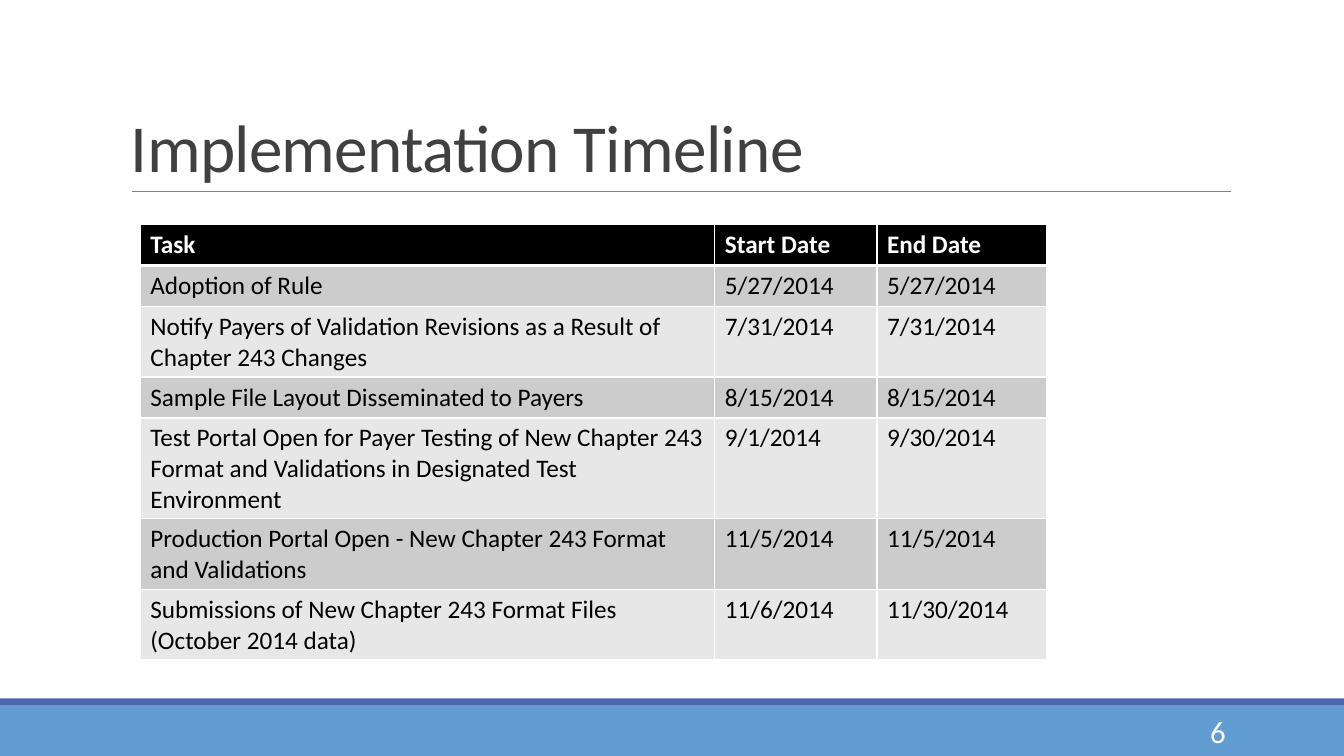
from dataclasses import dataclass

from lxml.etree import SubElement
from pptx import Presentation
from pptx.dml.color import RGBColor
from pptx.enum.shapes import MSO_CONNECTOR, MSO_SHAPE
from pptx.enum.text import MSO_ANCHOR, PP_ALIGN
from pptx.oxml import parse_xml
from pptx.oxml.ns import nsdecls, qn
from pptx.slide import Slide
from pptx.table import _Cell
from pptx.util import Emu, Inches, Pt

# Grid of 160 columns by 90 rows; one unit is a twelfth of an inch
COLUMNS, ROWS = 160, 90
UNIT = Inches(1) / 12


@dataclass(frozen=True)
class Theme:
    font: str = "Calibri"
    title_size: float = 48
    table_size: float = 18
    number_size: float = 22
    title: str = "404040"
    rule: str = "808080"
    band: str = "629DD1"
    stripe: str = "4A66AC"
    header: str = "000000"
    odd_row: str = "CCCCCC"
    even_row: str = "E7E7E7"
    dark: str = "000000"
    light: str = "FFFFFF"


@dataclass(frozen=True)
class Area:
    left: float
    top: float
    width: float
    height: float

    def lengths(self) -> tuple[Emu, ...]:
        return tuple(map(grid, (self.left, self.top, self.width, self.height)))


@dataclass(frozen=True)
class Bar:
    area: Area
    color: str


@dataclass(frozen=True)
class Label:
    text: str
    area: Area
    anchor: MSO_ANCHOR
    para_format: dict
    size: float
    color: str
    spacing: int = 0


@dataclass(frozen=True)
class Task:
    name: str
    start: str
    end: str


THEME = Theme()
BARS = [
    Bar(Area(0, 84, COLUMNS, 6), THEME.band),
    Bar(Area(0, 83.16, COLUMNS, 0.84), THEME.stripe),
]
LABELS = [
    Label("Implementation Timeline", Area(14.4, 3.75, 132.75, 19.05), MSO_ANCHOR.BOTTOM,
          {"line_spacing": 0.85}, THEME.title_size, THEME.title, -50),
    Label("6", Area(130, 84.7, 17.1, 4.8), MSO_ANCHOR.MIDDLE,
          {"alignment": PP_ALIGN.RIGHT}, THEME.number_size, THEME.light),
]
RULE_LEFT, RULE_RIGHT, RULE_TOP = 15.75, 146.5, 22.8
TABLE_LEFT, TABLE_TOP, ROW_HEIGHT = 16.7, 26.75, 4.87
TABLE_COLUMNS = (68.4, 19.3, 20.15)
TASKS = [
    Task("Task", "Start Date", "End Date"),
    Task("Adoption of Rule", "5/27/2014", "5/27/2014"),
    Task("Notify Payers of Validation Revisions as a Result of Chapter 243 Changes",
         "7/31/2014", "7/31/2014"),
    Task("Sample File Layout Disseminated to Payers", "8/15/2014", "8/15/2014"),
    Task("Test Portal Open for Payer Testing of New Chapter 243 Format and Validations "
         "in Designated Test Environment", "9/1/2014", "9/30/2014"),
    Task("Production Portal Open - New Chapter 243 Format and Validations",
         "11/5/2014", "11/5/2014"),
    Task("Submissions of New Chapter 243 Format Files (October 2014 data)",
         "11/6/2014", "11/30/2014"),
]


def grid(units: float) -> Emu:
    return Emu(round(units * UNIT))


def apply(target: object, values: dict) -> None:
    for name, value in values.items():
        setattr(target, name, value)


def add_span(para, text: str, size: float, color: str, bold: bool = False):
    span = para.add_run()
    span.text = text
    apply(span.font, {"name": THEME.font, "size": Pt(size), "bold": bold})
    span.font.color.rgb = RGBColor.from_string(color)
    return span


def add_bar(page: Slide, bar: Bar) -> None:
    shape = page.shapes.add_shape(MSO_SHAPE.RECTANGLE, *bar.area.lengths())
    shape.shadow.inherit = False
    shape.fill.solid()
    shape.fill.fore_color.rgb = RGBColor.from_string(bar.color)
    shape.line.fill.background()


def add_rule(page: Slide) -> None:
    rule = page.shapes.add_connector(
        MSO_CONNECTOR.STRAIGHT, grid(RULE_LEFT), grid(RULE_TOP), grid(RULE_RIGHT), grid(RULE_TOP))
    rule.line.color.rgb = RGBColor.from_string(THEME.rule)
    rule.line.width = Pt(0.5)
    SubElement(rule._element.spPr, qn("a:effectLst"))


def add_label(page: Slide, label: Label) -> None:
    box = page.shapes.add_textbox(*label.area.lengths())
    apply(box.text_frame, {"word_wrap": True, "vertical_anchor": label.anchor})
    para = box.text_frame.paragraphs[0]
    apply(para, label.para_format)
    span = add_span(para, label.text, label.size, label.color)
    if label.spacing:
        span.font._element.set("spc", str(label.spacing))


def add_borders(cell: _Cell, bottom: float, top: float) -> None:
    # Borders come before the fill in the cell properties
    widths = {"L": 1, "R": 1, "T": top, "B": bottom}
    for index, (side, width) in enumerate(widths.items()):
        border = parse_xml(
            f'<a:ln{side} {nsdecls("a")} w="{Pt(width)}"><a:solidFill>'
            f'<a:srgbClr val="{THEME.light}"/></a:solidFill></a:ln{side}>')
        cell._tc.get_or_add_tcPr().insert(index, border)


def add_timeline(page: Slide) -> None:
    area = Area(TABLE_LEFT, TABLE_TOP, sum(TABLE_COLUMNS), ROW_HEIGHT * len(TASKS))
    table = page.shapes.add_table(len(TASKS), len(TABLE_COLUMNS), *area.lengths()).table
    for column, width in zip(table.columns, TABLE_COLUMNS):
        column.width = grid(width)
    for index, (row, task) in enumerate(zip(table.rows, TASKS)):
        row.height = grid(ROW_HEIGHT)
        header = index == 0
        banded = THEME.odd_row if index % 2 else THEME.even_row
        for cell, text in zip(row.cells, (task.name, task.start, task.end)):
            cell.fill.solid()
            cell.fill.fore_color.rgb = RGBColor.from_string(THEME.header if header else banded)
            add_borders(cell, bottom=3 if header else 1, top=3 if index == 1 else 1)
            add_span(cell.text_frame.paragraphs[0], text, THEME.table_size,
                     THEME.light if header else THEME.dark, header)


def main() -> None:
    deck = Presentation()
    apply(deck, {"slide_width": grid(COLUMNS), "slide_height": grid(ROWS)})
    page = deck.slides.add_slide(deck.slide_layouts[6])
    # Footer bars and title rule
    for bar in BARS:
        add_bar(page, bar)
    add_rule(page)
    # Title, slide number and table
    for label in LABELS:
        add_label(page, label)
    add_timeline(page)
    deck.save("out.pptx")


if __name__ == "__main__":
    main()
